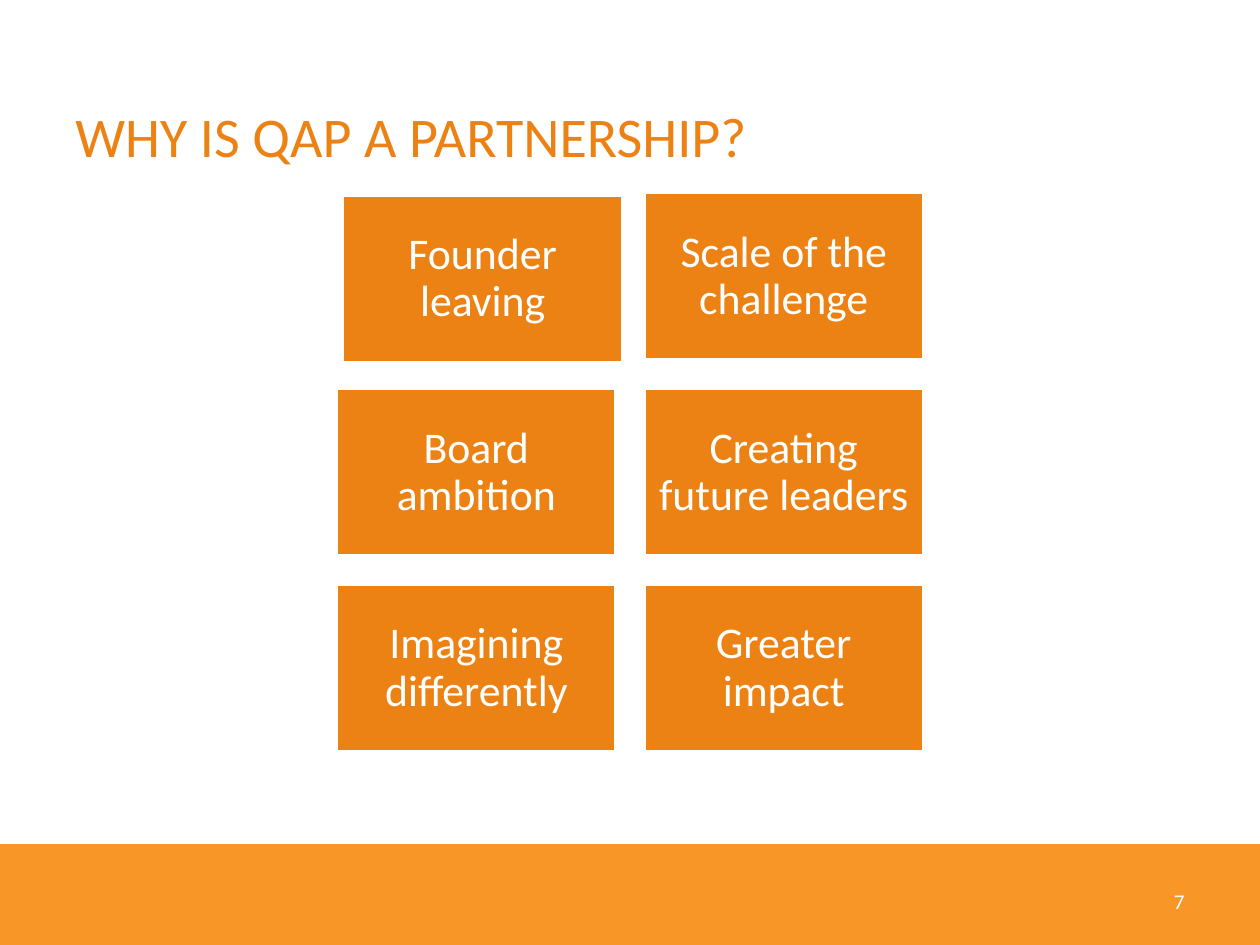
import pptx
import pptx.util
import pptx.dml.color
import pptx.enum.shapes
import pptx.enum.text

Inches = pptx.util.Inches
Pt = pptx.util.Pt
RGBColor = pptx.dml.color.RGBColor
Align = pptx.enum.text.PP_ALIGN

ORANGE = RGBColor(0xEC, 0x82, 0x13)
FOOTER_ORANGE = RGBColor(0xF8, 0x97, 0x28)
WHITE = RGBColor(0xFF, 0xFF, 0xFF)
FONT = "Calibri"

CARD_WIDTH, CARD_HEIGHT = 2.22, 1.33
COLUMNS = (2.67, 5.11)
FIRST_TOP, ROW_STEP = 1.53, 1.555
REASONS = (
    ("Founder leaving", "Scale of the challenge"),
    ("Board ambition", "Creating future leaders"),
    ("Imagining differently", "Greater impact"),
)
# The first card sits slightly off the grid
NUDGES = {(0, 0): (0.05, 0.02)}


def write(shape, text, size, color, align):
    frame = shape.text_frame
    frame.word_wrap = True
    frame.vertical_anchor = pptx.enum.text.MSO_ANCHOR.MIDDLE
    para = frame.paragraphs[0]
    para.alignment = align
    span = para.add_run()
    span.text = text
    span.font.name = FONT
    span.font.size = Pt(size)
    span.font.color.rgb = color
    return para


def add_label(page, left, top, width, height, text, size, color, align):
    box = page.shapes.add_textbox(
        Inches(left), Inches(top), Inches(width), Inches(height))
    write(box, text, size, color, align)


def add_block(page, left, top, width, height, fill):
    block = page.shapes.add_shape(
        pptx.enum.shapes.MSO_SHAPE.RECTANGLE,
        Inches(left), Inches(top), Inches(width), Inches(height))
    block.shadow.inherit = False
    block.fill.solid()
    block.fill.fore_color.rgb = fill
    block.line.fill.background()
    return block


def add_card(page, left, top, text):
    card = add_block(page, left, top, CARD_WIDTH, CARD_HEIGHT, ORANGE)
    card.line.color.rgb = WHITE
    card.line.width = Pt(2)
    frame = card.text_frame
    frame.margin_left = frame.margin_right = Inches(0.1)
    frame.margin_top = frame.margin_bottom = Inches(0.1)
    para = write(card, text, 25, WHITE, Align.CENTER)
    para.line_spacing = 0.9


def main():
    deck = pptx.Presentation()
    deck.slide_width = Inches(10)
    deck.slide_height = Inches(7.5)
    page = deck.slides.add_slide(deck.slide_layouts[6])

    # Footer band, title and page number
    add_block(page, 0, 6.7, 10, 0.81, FOOTER_ORANGE)
    add_label(page, 0.5, 0.45, 9, 1.25, "WHY IS QAP A PARTNERSHIP?",
              32, ORANGE, Align.LEFT)
    add_label(page, 7.17, 6.95, 2.33, 0.4, "7", 12, WHITE, Align.RIGHT)

    # Grid of reasons
    for row, reasons in enumerate(REASONS):
        for column, reason in enumerate(reasons):
            right, down = NUDGES.get((row, column), (0, 0))
            add_card(page, COLUMNS[column] + right,
                     FIRST_TOP + row * ROW_STEP + down, reason)

    deck.save("out.pptx")


if __name__ == "__main__":
    main()
